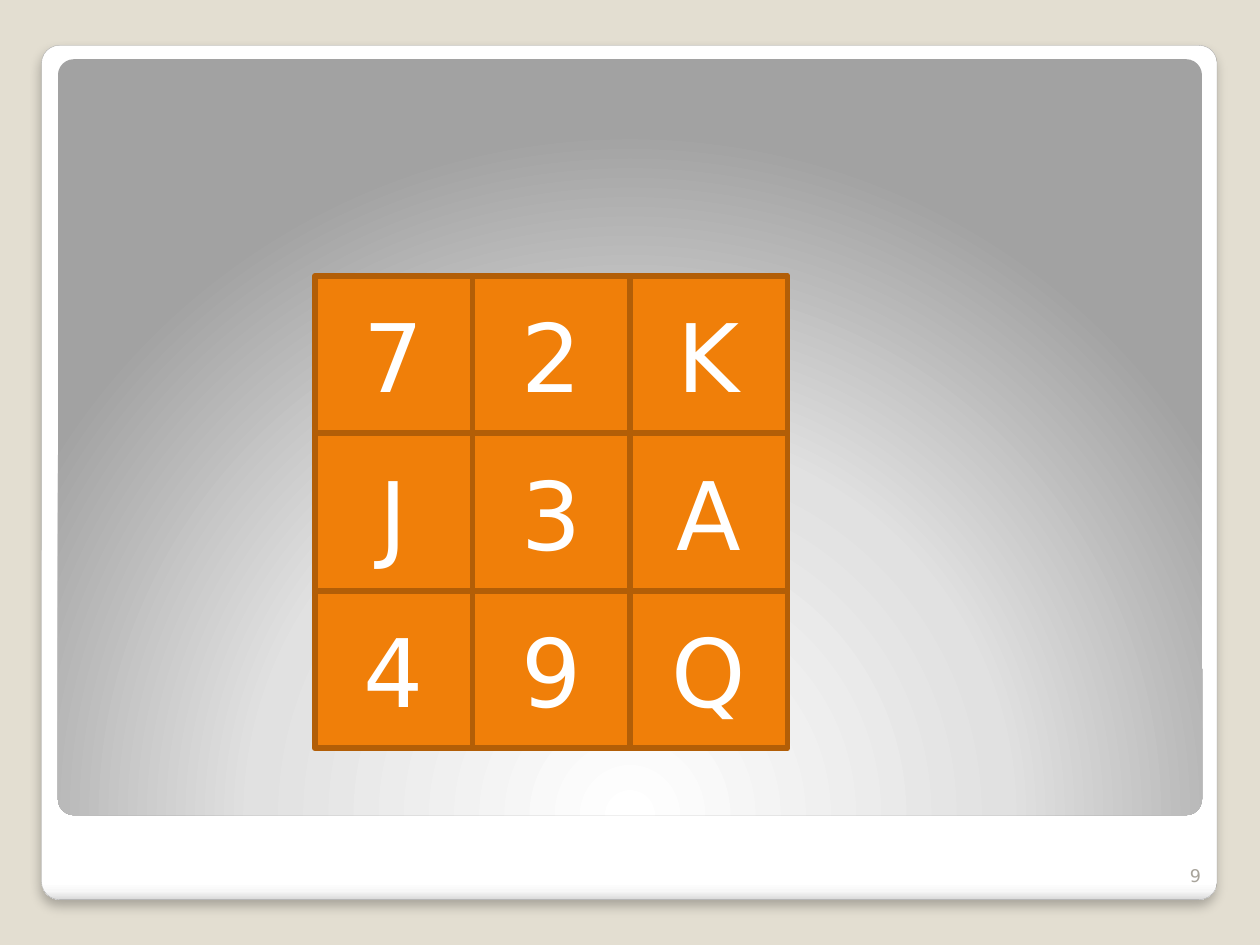
from lxml.etree import SubElement
from pptx import Presentation
from pptx.dml.color import RGBColor
from pptx.enum.shapes import MSO_SHAPE
from pptx.enum.text import MSO_ANCHOR, PP_ALIGN
from pptx.oxml import parse_xml
from pptx.oxml.ns import nsdecls, qn
from pptx.util import Inches, Pt

BEIGE = RGBColor(0xE3, 0xDE, 0xD1)
FRAME_GRAY = RGBColor(0xA4, 0xA4, 0xA4)
NUMBER_GRAY = RGBColor(0xA8, 0xA4, 0x9B)
ORANGE = RGBColor(0xF0, 0x7F, 0x09)
BROWN = RGBColor(0xB2, 0x5E, 0x07)
WHITE = RGBColor(0xFF, 0xFF, 0xFF)
FONT = "DejaVu Sans"


def add_panel(left, top, width, height, stops, direction):
    """Add a rounded panel with a gradient of (percent, colour) stops."""
    panel = page.shapes.add_shape(MSO_SHAPE.ROUNDED_RECTANGLE, Inches(left),
                                  Inches(top), Inches(width), Inches(height))
    panel.adjustments[0] = 0.021
    panel.shadow.inherit = False
    panel.line.fill.background()
    stop_xml = "".join(
        f'<a:gs pos="{percent * 1000}"><a:srgbClr val="{colour}"/></a:gs>'
        for percent, colour in stops)
    gradient = parse_xml(f'<a:gradFill {nsdecls("a")} rotWithShape="1">'
                         f'<a:gsLst>{stop_xml}</a:gsLst>{direction}</a:gradFill>')
    panel._element.spPr.find(qn("a:prstGeom")).addnext(gradient)
    return panel


def write_text(shape, text, size, colour, align, anchor):
    shape.text_frame.vertical_anchor = anchor
    para = shape.text_frame.paragraphs[0]
    para.text = text
    para.alignment = align
    para.font.name = FONT
    para.font.size = Pt(size)
    para.font.color.rgb = colour


deck = Presentation()
deck.slide_width = Inches(10)
deck.slide_height = Inches(7.5)
page = deck.slides.add_slide(deck.slide_layouts[6])
page.background.fill.solid()
page.background.fill.fore_color.rgb = BEIGE

# White frame with a soft shadow
frame = add_panel(0.33, 0.36, 9.33, 6.78,
                  [(0, "FFFFFF"), (98, "FFFFFF"), (99, "F7F7F7"), (100, "DADADA")],
                  '<a:lin ang="5400000" scaled="0"/>')
frame.line.color.rgb = FRAME_GRAY
frame.line.width = Pt(0.16)
effects = frame._element.spPr.find(qn("a:effectLst"))
shadow = SubElement(effects, qn("a:outerShdw"), blurRad=str(Pt(6)),
                    dist=str(Pt(4)), dir="5400000", algn="t", rotWithShape="0")
shadow_colour = SubElement(shadow, qn("a:srgbClr"), val="000000")
SubElement(shadow_colour, qn("a:alpha"), val="25000")

# Gray spotlight panel
add_panel(0.46, 0.47, 9.08, 6,
          [(0, "FFFFFF"), (55, "E1E1E1"), (100, "A2A2A2")],
          '<a:path path="circle">'
          '<a:fillToRect l="50000" t="175000" r="50000" b="-75000"/></a:path>')

# Slide number
number_box = page.shapes.add_textbox(Inches(9.13), Inches(6.68),
                                     Inches(0.5), Inches(0.4))
number_box.text_frame.word_wrap = True
write_text(number_box, "9", 10, NUMBER_GRAY, PP_ALIGN.RIGHT, MSO_ANCHOR.BOTTOM)

# Three by three grid of cards
CARD = 1.25
for row, labels in enumerate(["72K", "J3A", "49Q"]):
    for column, label in enumerate(labels):
        card = page.shapes.add_shape(
            MSO_SHAPE.RECTANGLE, Inches(2.5 + column * CARD),
            Inches(2.19 + row * CARD), Inches(CARD), Inches(CARD))
        card.shadow.inherit = False
        card.fill.solid()
        card.fill.fore_color.rgb = ORANGE
        card.line.color.rgb = BROWN
        card.line.width = Pt(3.35)
        write_text(card, label, 54, WHITE, PP_ALIGN.CENTER, MSO_ANCHOR.MIDDLE)

deck.save("out.pptx")
